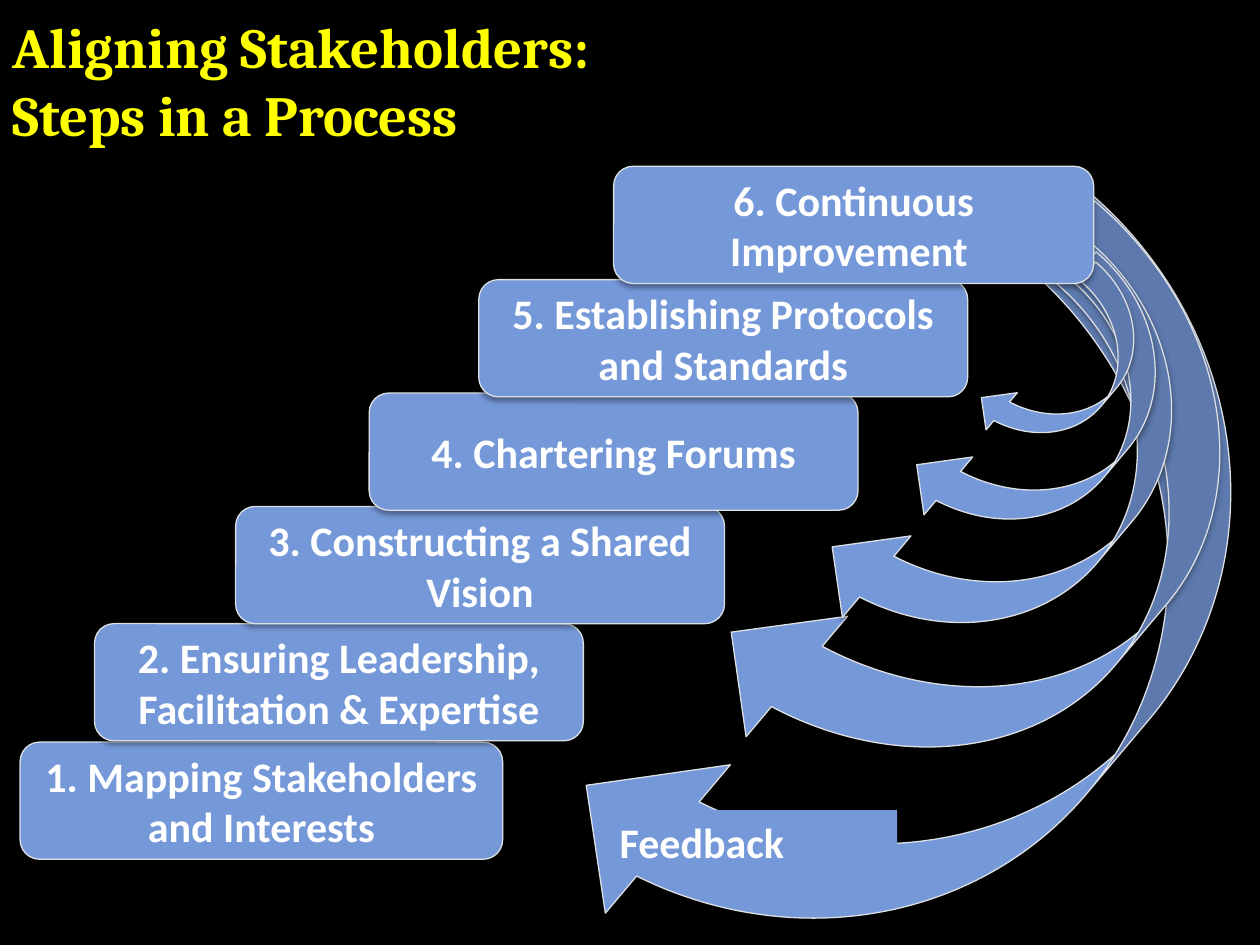
import pptx
import pptx.dml.color
import pptx.enum.shapes
import pptx.enum.text
import pptx.oxml
import pptx.oxml.ns
import pptx.util
from pptx.util import Inches

KIND = pptx.enum.shapes.MSO_SHAPE
ALIGN = pptx.enum.text.PP_ALIGN
ANCHOR = pptx.enum.text.MSO_ANCHOR

BLUE, EDGE, WHITE = "7598D9", "DCDFE3", "FFFFFF"
TILT = 40.1
STEP_H = 0.93

# Feedback arrows, longest first: left, top, width, height
ARROWS = [
    (6.03, 1.69, 3.08, 6.94),
    (6.75, 1.8, 2.5, 5.1),
    (7.29, 2.04, 1.69, 3.59),
    (7.75, 2.09, 1.2, 2.51),
    (8.09, 2.14, 0.77, 1.6),
]

# Staircase, bottom first: left, top, width, text
STEPS = [
    (0.16, 5.89, 3.83, "1. Mapping Stakeholders and Interests"),
    (0.75, 4.95, 3.88, "2. Ensuring Leadership, Facilitation & Expertise"),
    (1.87, 4.02, 3.88, "3. Constructing a Shared Vision"),
    (2.93, 3.12, 3.88, "4. Chartering Forums"),
    (3.8, 2.22, 3.88, "5. Establishing Protocols and Standards"),
    (4.87, 1.32, 3.81, "6. Continuous Improvement "),
]


def color(code):
    return pptx.dml.color.RGBColor.from_string(code)


def add_run(para, text, size, font, code):
    run = para.add_run()
    run.text = text
    run.font.size = pptx.util.Pt(size)
    run.font.name = font
    run.font.bold = True
    run.font.color.rgb = color(code)


def add_shade(shape):
    """Give the shape a soft shadow straight below it."""
    effects = shape._element.spPr.find(pptx.oxml.ns.qn("a:effectLst"))
    effects.append(pptx.oxml.parse_xml(
        f'<a:outerShdw {pptx.oxml.ns.nsdecls("a")} blurRad="{pptx.util.Pt(3.1)}" '
        f'dist="{pptx.util.Pt(1.8)}" dir="5400000" rotWithShape="0">'
        '<a:srgbClr val="000000"><a:alpha val="35000"/></a:srgbClr></a:outerShdw>'))


def add_block(slide, kind, box):
    shape = slide.shapes.add_shape(kind, *map(Inches, box))
    shape.fill.solid()
    shape.fill.fore_color.rgb = color(BLUE)
    shape.line.color.rgb = color(EDGE)
    shape.line.width = pptx.util.Pt(0.75)
    shape.shadow.inherit = False
    add_shade(shape)
    return shape


def add_arrow(slide, box):
    add_block(slide, KIND.CURVED_LEFT_ARROW, box).rotation = TILT


def add_step(slide, left, top, width, text):
    shape = add_block(slide, KIND.ROUNDED_RECTANGLE, (left, top, width, STEP_H))
    frame = shape.text_frame
    frame.word_wrap = True
    frame.vertical_anchor = ANCHOR.MIDDLE
    para = frame.paragraphs[0]
    para.alignment = ALIGN.CENTER
    add_run(para, text, 24, "Calibri", WHITE)


def set_title(slide, lines):
    title = slide.shapes.title
    title.left, title.top = Inches(0), Inches(0.09)
    title.width, title.height = Inches(10.08), Inches(1.08)
    frame = title.text_frame
    frame.word_wrap = True
    frame.auto_size = pptx.enum.text.MSO_AUTO_SIZE.NONE
    frame.vertical_anchor = ANCHOR.MIDDLE
    para = frame.paragraphs[0]
    para.alignment = ALIGN.LEFT
    for i, line in enumerate(lines):
        if i:
            para.add_line_break()
        add_run(para, line, 32.4, "Cambria", "FFFF00")


def add_label(slide, box, text):
    label = slide.shapes.add_textbox(*map(Inches, box))
    label.fill.solid()
    label.fill.fore_color.rgb = color(BLUE)
    label.text_frame.word_wrap = True
    add_run(label.text_frame.paragraphs[0], text, 24, "Calibri", WHITE)


def main():
    deck = pptx.Presentation()
    deck.slide_width, deck.slide_height = Inches(10), Inches(7.5)
    slide = deck.slides.add_slide(deck.slide_layouts[5])
    slide.background.fill.solid()
    slide.background.fill.fore_color.rgb = color("000000")

    set_title(slide, ["Aligning Stakeholders:", "Steps in a Process"])

    # The shortest arrow lies over the lower steps, under the top one
    for box in ARROWS[:-1]:
        add_arrow(slide, box)
    for step in STEPS[:-1]:
        add_step(slide, *step)
    add_arrow(slide, ARROWS[-1])
    add_step(slide, *STEPS[-1])

    # Label on the longest arrow
    add_label(slide, (4.82, 6.43, 2.3, 0.5), "Feedback")

    deck.save("out.pptx")


if __name__ == "__main__":
    main()
